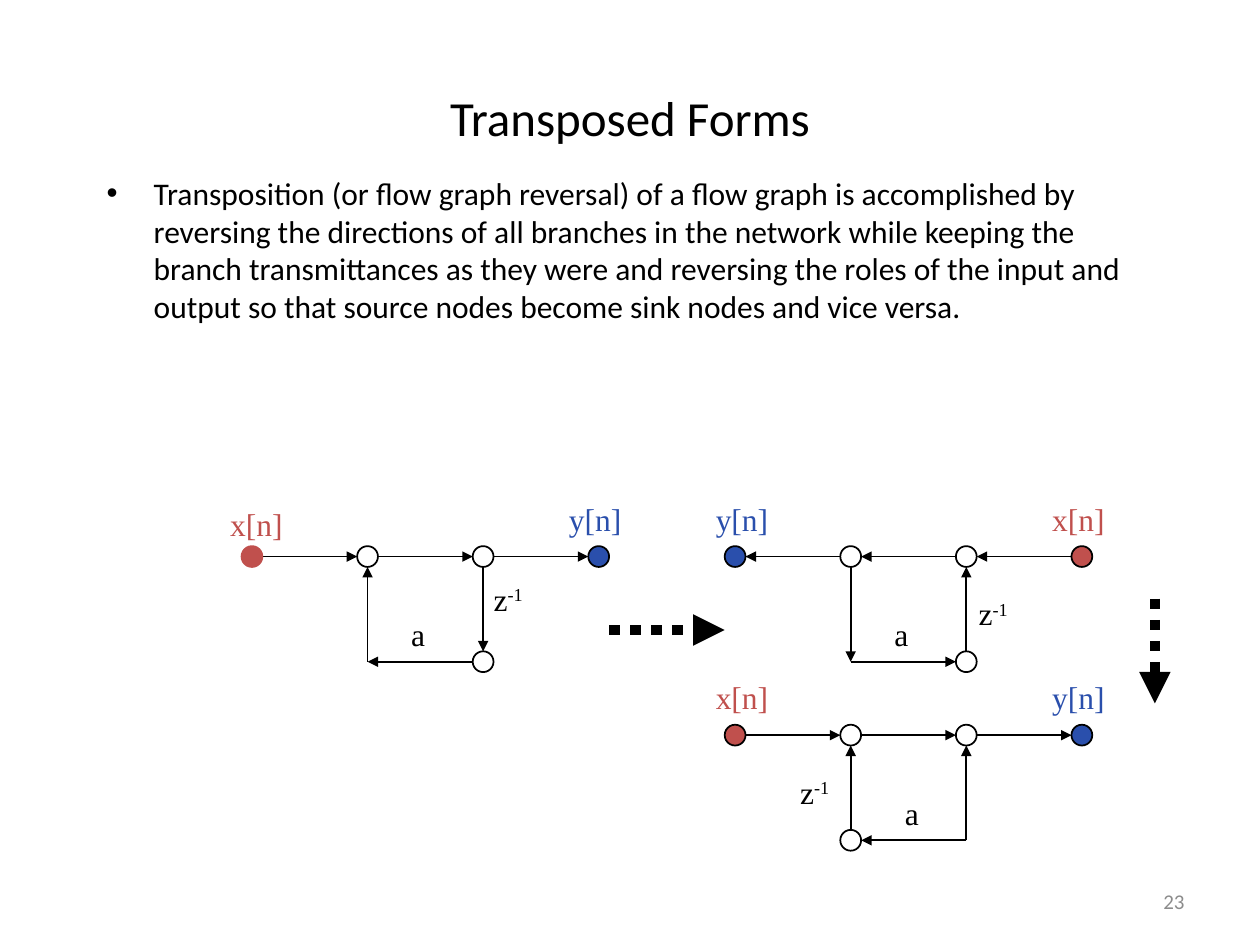
from lxml.etree import SubElement
from pptx import Presentation
from pptx.dml.color import RGBColor
from pptx.enum.dml import MSO_LINE_DASH_STYLE as Dash
from pptx.enum.shapes import MSO_CONNECTOR as Connector, MSO_SHAPE as Shape
from pptx.enum.text import MSO_ANCHOR as Anchor, MSO_AUTO_SIZE as AutoSize, PP_ALIGN as Align
from pptx.oxml.ns import qn
from pptx.util import Cm, Pt

RED, BLUE, BLACK, WHITE, GREY = "C0504D", "2A4FAC", "000000", "FFFFFF", "8C8C8C"
RADIUS, PITCH, DROP = 0.21, 2.33, 2.12


def color(value):
    return RGBColor.from_string(value)


def add_arrow(start, end, width=1):
    arrow = page.shapes.add_connector(Connector.STRAIGHT, *map(Cm, (*start, *end)))
    arrow.line.color.rgb = color(BLACK)
    arrow.line.width = Pt(width)
    if width > 1:
        arrow.line.dash_style = Dash.ROUND_DOT  # written to the file as sysDot
    SubElement(arrow.line._get_or_add_ln(), qn("a:tailEnd"), type="triangle")
    SubElement(arrow._element.spPr, qn("a:effectLst"))


deck = Presentation()
deck.slide_width, deck.slide_height = Cm(25.4), Cm(19.05)
page = deck.slides.add_slide(deck.slide_layouts[5])

title = page.shapes.title
title.left, title.top, title.width, title.height = Cm(1.27), Cm(0.76), Cm(22.86), Cm(3.18)
title.text_frame.text = "Transposed Forms"
title.text_frame.vertical_anchor = Anchor.MIDDLE
para = title.text_frame.paragraphs[0]
para.alignment = Align.CENTER
para.font.name, para.font.size = "Calibri", Pt(28)
para.font.color.rgb = color(BLACK)

body = page.shapes.add_textbox(Cm(1.9), Cm(3.38), Cm(21.6), Cm(5.77))
body.text_frame.word_wrap = True
para = body.text_frame.paragraphs[0]
para.text = (
    "Transposition (or flow graph reversal) of a flow graph is accomplished by "
    "reversing the directions of all branches in the network while keeping the "
    "branch transmittances as they were and reversing the roles of the input and "
    "output so that source nodes become sink nodes and vice versa."
)
para.font.name, para.font.size = "Calibri", Pt(18)
para.font.color.rgb = color(BLACK)
para.space_before = Pt(3.6)
props = para._p.get_or_add_pPr()
props.set("marL", str(Cm(0.95)))
props.set("indent", str(Cm(-0.95)))
SubElement(props, qn("a:buFont"), typeface="Arial")
SubElement(props, qn("a:buChar"), char="•")

# Each graph: left and top of its first node, input column, corner without a node, feedback loop.
# Grid points are (column, row).
forward_loop = [(2, 0), (2, 1), (1, 1), (1, 0)]
graphs = [
    (5.08, 11.22, 0, (1, 1), forward_loop),
    (14.82, 11.22, 3, (1, 1), forward_loop[::-1]),
    (14.82, 14.82, 0, (2, 1), [(2, 1), (1, 1), (1, 0)]),
]
for number, (left, top, source, corner, loop) in enumerate(graphs):
    main_path = [(column, 0) for column in range(4)]
    if source == 3:
        main_path.reverse()
    branches = list(zip(main_path, main_path[1:])) + list(zip(loop, loop[1:]))
    if corner == loop[0]:
        branches.append((corner, (2, 0)))

    for start, end in branches:
        ends = []
        for point, other in ((start, end), (end, start)):
            gap = 0 if point == corner else RADIUS
            ends.append((
                left + point[0] * PITCH + gap * (other[0] - point[0]),
                top + point[1] * DROP + gap * (other[1] - point[1]),
            ))
        add_arrow(*ends)

    loop_node = (3 - corner[0], 1)
    for column, row in main_path + [loop_node]:
        node = page.shapes.add_shape(
            Shape.OVAL,
            Cm(left + column * PITCH - RADIUS), Cm(top + row * DROP - RADIUS),
            Cm(2 * RADIUS), Cm(2 * RADIUS),
        )
        fill = {source: RED, 3 - source: BLUE}.get(column, WHITE)
        node.shadow.inherit = False
        node.fill.solid()
        node.fill.fore_color.rgb = color(fill)
        first_input = number == 0 and column == source
        node.line.color.rgb = color(RED if first_input else BLACK)
        node.line.width = Pt(1)

labels = [
    ("x[n]", RED, 1.57, [(4.39, 10.06), (20.96, 9.95), (14.18, 13.55)]),
    ("y[n]", BLUE, 1.57, [(11.22, 9.95), (14.18, 9.95), (20.96, 13.55)]),
    ("a", BLACK, 0.79, [(8.04, 12.28), (17.78, 12.28), (17.99, 15.88)]),
    ("z", BLACK, 1.14, [(9.7, 11.56), (19.48, 11.85), (15.88, 15.45)]),
]
for text, ink, width, places in labels:
    for left, top in places:
        label = page.shapes.add_textbox(Cm(left), Cm(top), Cm(width), Cm(1.02))
        label.text_frame.word_wrap = False
        label.text_frame.auto_size = AutoSize.SHAPE_TO_FIT_TEXT
        para = label.text_frame.paragraphs[0]
        para.text = text
        para.font.name, para.font.size = "Times New Roman", Pt(18)
        para.font.color.rgb = color(ink)
        if text == "z":
            exponent = para.add_run()
            exponent.text = "-1"
            exponent.font._element.set("baseline", "30000")

add_arrow((12.28, 12.7), (14.61, 12.7), width=6)
add_arrow((23.28, 12.07), (23.28, 14.18), width=6)

page_number = page.shapes.add_textbox(Cm(18.2), Cm(17.65), Cm(5.93), Cm(1.02))
page_number.text_frame.word_wrap = True
page_number.text_frame.vertical_anchor = Anchor.MIDDLE
para = page_number.text_frame.paragraphs[0]
para.text = "23"
para.alignment = Align.RIGHT
para.font.name, para.font.size = "Calibri", Pt(12)
para.font.color.rgb = color(GREY)

deck.save("out.pptx")
